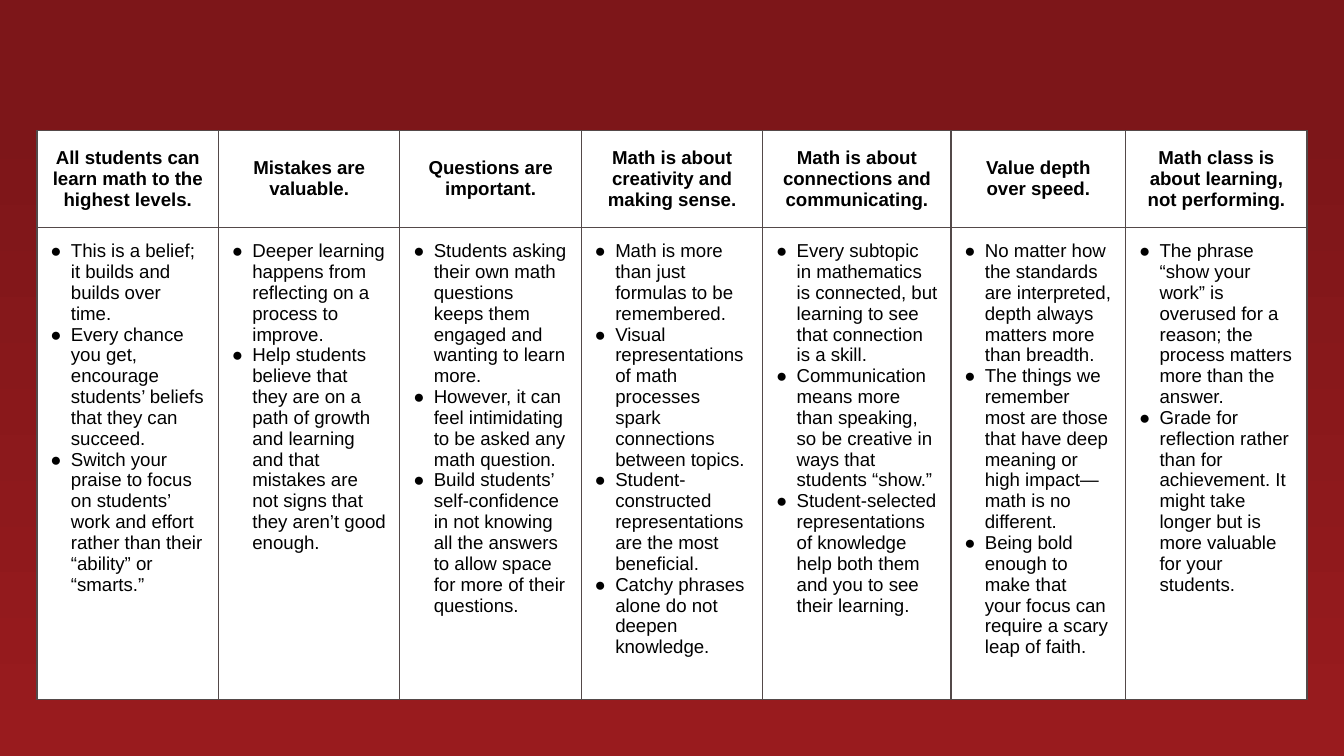
from lxml.etree import SubElement
from pptx import Presentation
from pptx.dml.color import RGBColor
from pptx.enum.text import MSO_ANCHOR, PP_ALIGN
from pptx.oxml.ns import qn
from pptx.util import Inches, Pt

PRINCIPLES = [
    ("All students can learn math to the highest levels.", [
        "This is a belief; it builds and builds over time.",
        "Every chance you get, encourage students’ beliefs that they can succeed.",
        "Switch your praise to focus on students’ work and effort rather than their “ability” or “smarts.”",
    ]),
    ("Mistakes are valuable.", [
        "Deeper learning happens from reflecting on a process to improve.",
        "Help students believe that they are on a path of growth and learning and that mistakes are "
        "not signs that they aren’t good enough.",
    ]),
    ("Questions are important.", [
        "Students asking their own math questions keeps them engaged and wanting to learn more.",
        "However, it can feel intimidating to be asked any math question.",
        "Build students’ self-confidence in not knowing all the answers to allow space for more of "
        "their questions.",
    ]),
    ("Math is about creativity and making sense.", [
        "Math is more than just formulas to be remembered.",
        "Visual representations of math processes spark connections between topics.",
        "Student-\nconstructed representations are the most beneficial.",
        "Catchy phrases alone do not deepen knowledge.",
    ]),
    ("Math is about connections and communicating.", [
        "Every subtopic in mathematics is connected, but learning to see that connection is a skill.",
        "Communication means more than speaking, so be creative in ways that students “show.”",
        "Student-selected representations of knowledge help both them and you to see their learning.",
    ]),
    ("Value depth over speed.", [
        "No matter how the standards are interpreted, depth always matters more than breadth.",
        "The things we remember most are those that have deep meaning or high impact—math is no different.",
        "Being bold enough to make that\nyour focus can require a scary leap of faith.",
    ]),
    ("Math class is about learning, not performing.", [
        "The phrase “show your work” is overused for a reason; the process matters more than the answer.",
        "Grade for reflection rather than for achievement. It might take longer but is more valuable "
        "for your students.",
    ]),
]

THEME = {
    "font": {"name": "Arial", "size": Pt(10)},
    "text": "000000",
    "cell": "FFFFFF",
    "border": "534949",
    "border_width": Pt(0.75),
    "background": [(0, "991B1E"), (0.85, "7D1619")],
}
SLIDE_W = Inches(10)
SLIDE_H = SLIDE_W * 9 // 16
COLUMN_WIDTHS = [Inches(w) for w in (1.35, 1.35, 1.35, 1.35, 1.4, 1.3, 1.35)]
ROW_HEIGHTS = [Pt(52), Pt(253)]
TABLE_W, TABLE_H = sum(COLUMN_WIDTHS), sum(ROW_HEIGHTS)
TABLE_LEFT, TABLE_TOP = (SLIDE_W - TABLE_W) // 2, Inches(0.97)
INSET, BULLET_INDENT = Inches(0.1), Pt(11)
CELL_FORMAT = {f"margin_{side}": INSET for side in ("left", "right", "top", "bottom")}


def add_color(parent, color):
    SubElement(parent, qn("a:srgbClr"), val=color)


def paint_background(slide):
    fill = slide.background.fill
    fill.gradient()
    fill.gradient_angle = 90
    for stop, (position, color) in zip(fill.gradient_stops, THEME["background"]):
        stop.position = position
        stop.color.rgb = RGBColor.from_string(color)


def format_cell(cell, anchor):
    for attribute, value in {**CELL_FORMAT, "vertical_anchor": anchor}.items():
        setattr(cell, attribute, value)
    properties = cell._tc.get_or_add_tcPr()
    for edge in ("lnL", "lnR", "lnT", "lnB"):
        line = SubElement(properties, qn(f"a:{edge}"), w=str(THEME["border_width"]))
        add_color(SubElement(line, qn("a:solidFill")), THEME["border"])
    cell.fill.solid()
    cell.fill.fore_color.rgb = RGBColor.from_string(THEME["cell"])


def add_bullet(paragraph):
    properties = paragraph._p.get_or_add_pPr()
    properties.set("marL", str(BULLET_INDENT))
    properties.set("indent", str(-BULLET_INDENT))
    add_color(SubElement(properties, qn("a:buClr")), THEME["text"])
    SubElement(properties, qn("a:buSzPts"), val=str(THEME["font"]["size"].centipoints))
    SubElement(properties, qn("a:buFont"), typeface=THEME["font"]["name"])
    SubElement(properties, qn("a:buChar"), char="●")


def write(paragraph, words, bold):
    paragraph.text = words
    for run in paragraph.runs:
        for attribute, value in {**THEME["font"], "bold": bold}.items():
            setattr(run.font, attribute, value)
        run.font.color.rgb = RGBColor.from_string(THEME["text"])


def fill_column(heading_cell, advice_cell, heading, advice):
    format_cell(heading_cell, MSO_ANCHOR.MIDDLE)
    title = heading_cell.text_frame.paragraphs[0]
    title.alignment = PP_ALIGN.CENTER
    write(title, heading, True)

    format_cell(advice_cell, MSO_ANCHOR.TOP)
    frame = advice_cell.text_frame
    for index, point in enumerate(advice):
        paragraph = frame.add_paragraph() if index else frame.paragraphs[0]
        add_bullet(paragraph)
        write(paragraph, point, False)


def main():
    deck = Presentation()
    deck.slide_width, deck.slide_height = SLIDE_W, SLIDE_H
    slide = deck.slides.add_slide(deck.slide_layouts[6])
    paint_background(slide)

    principles = slide.shapes.add_table(
        len(ROW_HEIGHTS), len(PRINCIPLES), TABLE_LEFT, TABLE_TOP, TABLE_W, TABLE_H).table
    principles.horz_banding = False
    for column, width in zip(principles.columns, COLUMN_WIDTHS):
        column.width = width
    for row, height in zip(principles.rows, ROW_HEIGHTS):
        row.height = height
    for index, (heading, advice) in enumerate(PRINCIPLES):
        fill_column(principles.cell(0, index), principles.cell(1, index), heading, advice)

    deck.save("out.pptx")


if __name__ == "__main__":
    main()
